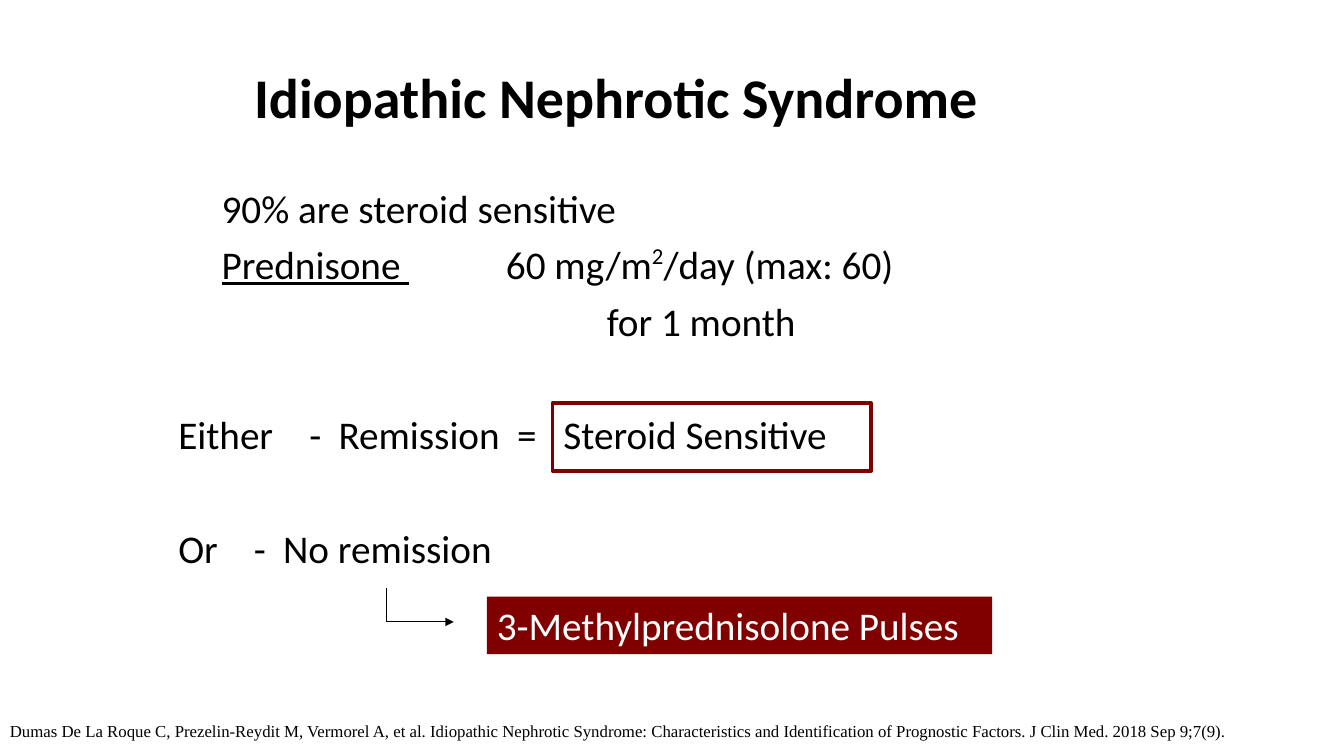
import pptx
import pptx.dml.color
import pptx.enum.shapes
import pptx.enum.text
import pptx.oxml.ns
import pptx.util
from lxml import etree

Inches = pptx.util.Inches
Pt = pptx.util.Pt
qn = pptx.oxml.ns.qn


def rgb(value):
    return pptx.dml.color.RGBColor.from_string(value)


def style(run, size, color="000000", font="Calibri"):
    run.font.size = Pt(size)
    run.font.name = font
    run.font.color.rgb = rgb(color)


BLACK, WHITE, MAROON = "000000", "FFFFFF", "800000"

prs = pptx.Presentation()
prs.slide_width = Inches(13.33)
prs.slide_height = Inches(7.5)
slide = prs.slides.add_slide(prs.slide_layouts[5])

# Title
title = slide.shapes.title
title.left, title.top = Inches(2.42), Inches(0.33)
title.width, title.height = Inches(8.5), Inches(1.33)
title.text_frame.text = "Idiopathic Nephrotic Syndrome"
title.text_frame.vertical_anchor = pptx.enum.text.MSO_ANCHOR.MIDDLE
heading = title.text_frame.paragraphs[0]
heading.alignment = pptx.enum.text.PP_ALIGN.LEFT
heading.line_spacing = 0.9
style(heading.runs[0], 40)
heading.runs[0].font.bold = True

# Treatment course: space before in points, tab stops in inches, runs
course = [
    (10, [0.43], ["\t90% are steroid sensitive"]),
    (10, [0.43, 3.25], ["\t", "Prednisone ", "\t60 mg/m", "2", "/day (max: 60)"]),
    (10, [4.25], ["\tfor 1 month"]),
    (51, [1.3, 1.59, 3.36, 3.82], ["Either\t-\tRemission\t=\tSteroid Sensitive"]),
    (51, [0.75, 1.04], ["Or\t-\tNo remission"]),
]
body = slide.shapes.add_textbox(Inches(1.67), Inches(1.83), Inches(10), Inches(5.25))
body.text_frame.word_wrap = True
for index, (space_before, stops, texts) in enumerate(course):
    line = body.text_frame.paragraphs[0] if index == 0 else body.text_frame.add_paragraph()
    line.line_spacing = 0.9
    line.space_before = Pt(space_before)
    tab_list = etree.SubElement(line._p.get_or_add_pPr(), qn("a:tabLst"))
    for stop in stops:
        etree.SubElement(tab_list, qn("a:tab"), pos=str(Inches(stop)), algn="l")
    for text in texts:
        run = line.add_run()
        run.text = text
        style(run, 28)
        if text == "Prednisone ":
            run.font.underline = True
        elif text == "2":
            run._r.get_or_add_rPr().set("baseline", "38000")

# Outcome boxes
RECTANGLE = pptx.enum.shapes.MSO_SHAPE.RECTANGLE
sensitive = slide.shapes.add_shape(RECTANGLE, Inches(5.48), Inches(4), Inches(3.16), Inches(0.67))
sensitive.shadow.inherit = False
sensitive.fill.background()
sensitive.line.color.rgb = rgb(MAROON)
sensitive.line.width = Pt(2.75)

pulses = slide.shapes.add_shape(RECTANGLE, Inches(4.83), Inches(5.92), Inches(5.01), Inches(0.57))
pulses.shadow.inherit = False
pulses.fill.solid()
pulses.fill.fore_color.rgb = rgb(MAROON)
pulses.line.fill.background()
pulses.text_frame.text = "3-Methylprednisolone Pulses"
pulses.text_frame.vertical_anchor = pptx.enum.text.MSO_ANCHOR.TOP
pulses.text_frame.paragraphs[0].alignment = pptx.enum.text.PP_ALIGN.LEFT
style(pulses.text_frame.paragraphs[0].runs[0], 28, WHITE)

# Bent arrow from "No remission" towards the pulses
for x1, y1, x2, y2, has_head in [(3.83, 5.83, 3.83, 6.17, False), (3.83, 6.17, 4.5, 6.17, True)]:
    segment = slide.shapes.add_connector(
        pptx.enum.shapes.MSO_CONNECTOR.STRAIGHT, Inches(x1), Inches(y1), Inches(x2), Inches(y2))
    segment.line.color.rgb = rgb(BLACK)
    segment.line.width = Pt(0.75)
    if has_head:
        etree.SubElement(segment.line._get_or_add_ln(), qn("a:tailEnd"), type="triangle")
    etree.SubElement(segment._element.spPr, qn("a:effectLst"))

# Citation
citation = slide.shapes.add_textbox(Inches(0), Inches(7.1), Inches(12.44), Inches(0.3))
citation.text_frame.text = (
    "Dumas De La Roque C, Prezelin-Reydit M, Vermorel A, et al. Idiopathic Nephrotic Syndrome: "
    "Characteristics and Identification of Prognostic Factors. J Clin Med. 2018 Sep 9;7(9).")
citation.text_frame.word_wrap = False
citation.text_frame.auto_size = pptx.enum.text.MSO_AUTO_SIZE.SHAPE_TO_FIT_TEXT
citation.text_frame.vertical_anchor = pptx.enum.text.MSO_ANCHOR.MIDDLE
style(citation.text_frame.paragraphs[0].runs[0], 12, font="Times New Roman")

prs.save("out.pptx")
